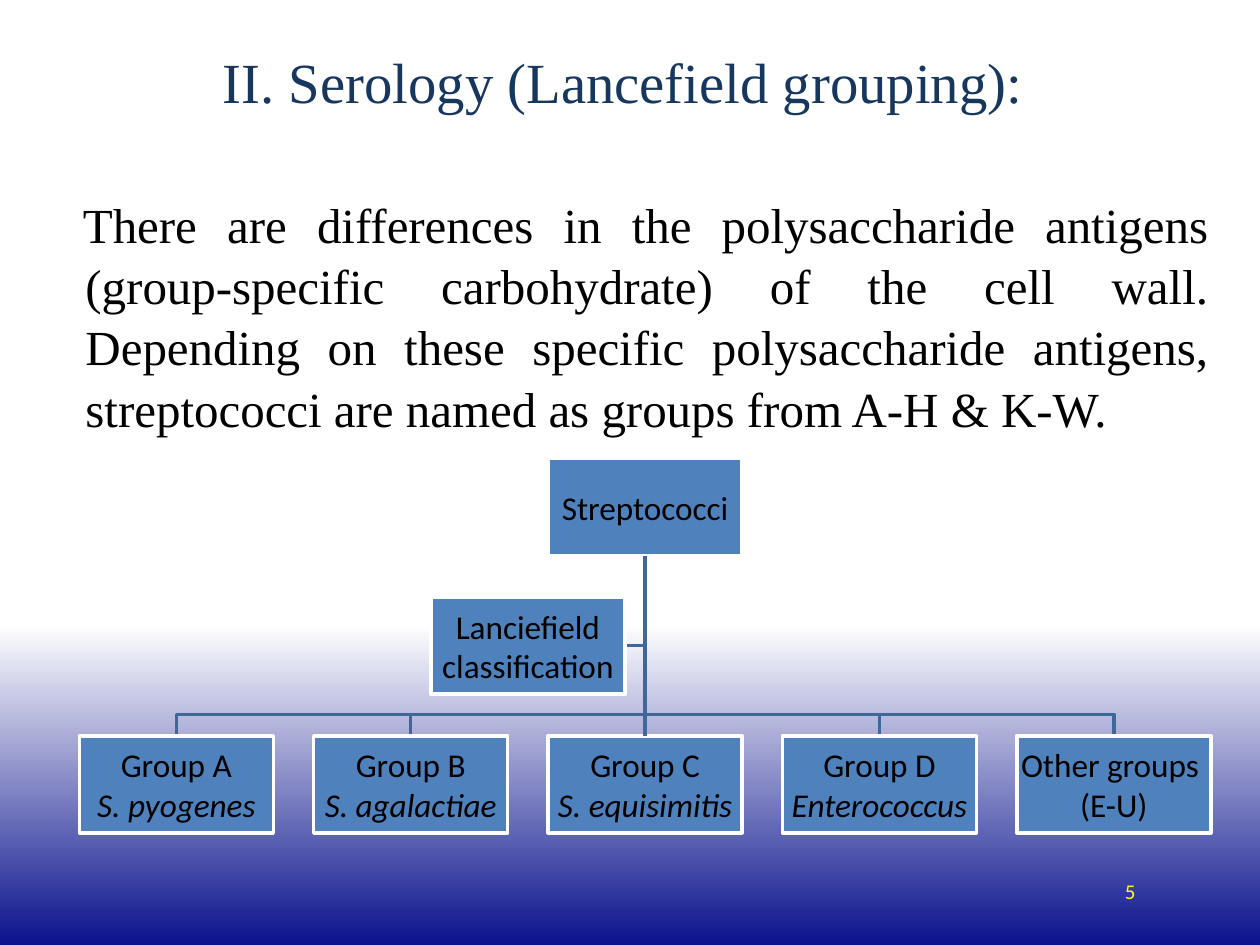
import pptx
import pptx.util
import pptx.dml.color
import pptx.enum.shapes
import pptx.enum.text
import lxml.etree
from typing import NamedTuple

RGBColor = pptx.dml.color.RGBColor
WHITE = RGBColor(0xFF, 0xFF, 0xFF)
BLACK = RGBColor(0, 0, 0)
NAVY = RGBColor(0x0A, 0x12, 0x8C)
TITLE_BLUE = RGBColor(0x17, 0x37, 0x5E)
BOX_BLUE = RGBColor(0x4F, 0x81, 0xBD)
LINE_BLUE = RGBColor(0x3F, 0x67, 0x97)
YELLOW = RGBColor(0xFF, 0xFF, 0)

SLIDE_WIDTH = pptx.util.Inches(10)
SLIDE_HEIGHT = pptx.util.Inches(7.5)
LINE_WIDTH = pptx.util.Pt(2)
GRID_LEFT, GRID_TOP = pptx.util.Inches(0.63), pptx.util.Inches(3.64)
COLUMN_STEP, ROW_STEP = pptx.util.Inches(1.86), pptx.util.Inches(1.1)
BOX_WIDTH, BOX_HEIGHT = pptx.util.Inches(1.54), pptx.util.Inches(0.77)
BUS_GAP = pptx.util.Inches(0.17)
PADDING = pptx.util.Inches(0.01)

ALIGN = pptx.enum.text.PP_ALIGN
MIDDLE = pptx.enum.text.MSO_ANCHOR.MIDDLE
TITLE_FONT = {"name": "Times New Roman", "size": pptx.util.Pt(32.4)}
BODY_FONT = {"name": "Times New Roman", "size": pptx.util.Pt(28)}
BOX_FONT = {"name": "Calibri", "size": pptx.util.Pt(19)}
NUMBER_FONT = {"name": "Calibri", "size": pptx.util.Pt(12)}
BOX_FRAME = {
    "margin_left": PADDING, "margin_right": PADDING,
    "margin_top": PADDING, "margin_bottom": PADDING,
    "vertical_anchor": MIDDLE, "word_wrap": True,
}


class Node(NamedTuple):
    column: float
    row: int
    label: str
    detail: str = ""
    italic: bool = True

    @property
    def left(self) -> int:
        return round(GRID_LEFT + self.column * COLUMN_STEP)

    @property
    def top(self) -> int:
        return GRID_TOP + self.row * ROW_STEP

    @property
    def center(self) -> int:
        return self.left + BOX_WIDTH // 2


ROOT = Node(2, 0, "Streptococci")
ASSISTANT = Node(1.5, 1, "Lanciefield classification")
GROUPS = [
    Node(0, 2, "Group A", "S. pyogenes"),
    Node(1, 2, "Group B", "S. agalactiae"),
    Node(2, 2, "Group C", "S. equisimitis"),
    Node(3, 2, "Group D", "Enterococcus"),
    Node(4, 2, "Other groups ", "(E-U)", False),
]


def apply(target, values: dict) -> None:
    for name, value in values.items():
        setattr(target, name, value)


def write(paragraph, text: str, font: dict, color: RGBColor, align, italic=False) -> None:
    paragraph.alignment = align
    run = paragraph.add_run()
    run.text = text
    apply(run.font, {**font, "italic": italic})
    run.font.color.rgb = color


def share(left: float, top: float, width: float, height: float) -> dict:
    return {
        "left": round(SLIDE_WIDTH * left), "top": round(SLIDE_HEIGHT * top),
        "width": round(SLIDE_WIDTH * width), "height": round(SLIDE_HEIGHT * height),
    }


def draw_branch(shapes, points: list) -> None:
    builder = shapes.build_freeform(*points[0], scale=1.0)
    builder.add_line_segments(points[1:], close=False)
    branch = builder.convert_to_shape()
    branch.shadow.inherit = False
    branch.fill.background()
    branch.line.color.rgb = LINE_BLUE
    branch.line.width = LINE_WIDTH


def draw_node(shapes, node: Node):
    box = shapes.add_shape(
        pptx.enum.shapes.MSO_SHAPE.RECTANGLE, node.left, node.top, BOX_WIDTH, BOX_HEIGHT)
    box.shadow.inherit = False
    box.fill.solid()
    box.fill.fore_color.rgb = BOX_BLUE
    box.line.color.rgb = WHITE
    box.line.width = LINE_WIDTH
    frame = box.text_frame
    apply(frame, BOX_FRAME)
    write(frame.paragraphs[0], node.label, BOX_FONT, BLACK, ALIGN.CENTER)
    if node.detail:
        write(frame.add_paragraph(), node.detail, BOX_FONT, BLACK, ALIGN.CENTER, node.italic)
    return box


def draw_trunk(shapes, upper, lower) -> None:
    trunk = shapes.add_connector(pptx.enum.shapes.MSO_CONNECTOR.STRAIGHT, 0, 0, 0, 0)
    trunk.begin_connect(upper, 2)
    trunk.end_connect(lower, 0)
    trunk.line.color.rgb = LINE_BLUE
    trunk.line.width = LINE_WIDTH
    properties = trunk._element.spPr
    lxml.etree.SubElement(properties, pptx.oxml.ns.qn("a:effectLst"))


def draw_hierarchy(shapes) -> None:
    start = (ROOT.center, ROOT.top + BOX_HEIGHT)
    side = ASSISTANT.top + BOX_HEIGHT // 2
    draw_branch(shapes, [start, (ROOT.center, side), (ASSISTANT.left + BOX_WIDTH, side)])
    for group in GROUPS:
        if group.column != ROOT.column:
            bus = group.top - BUS_GAP
            draw_branch(shapes, [start, (ROOT.center, bus), (group.center, bus),
                                 (group.center, group.top)])
    boxes = {node: draw_node(shapes, node) for node in [ROOT, *GROUPS, ASSISTANT]}
    draw_trunk(shapes, boxes[ROOT], boxes[GROUPS[2]])


def paint_background(slide) -> None:
    fill = slide.background.fill
    fill.gradient()
    fill.gradient_angle = 270
    for stop, position, color in zip(fill.gradient_stops, (0.66, 1), (WHITE, NAVY)):
        stop.position = position
        stop.color.rgb = color


def main() -> None:
    presentation = pptx.Presentation()
    apply(presentation, {"slide_width": SLIDE_WIDTH, "slide_height": SLIDE_HEIGHT})
    slide = presentation.slides.add_slide(presentation.slide_layouts[5])
    paint_background(slide)

    title = slide.shapes.title
    apply(title, share(0.047, 0.04, 0.906, 0.092))
    apply(title.text_frame, {"vertical_anchor": MIDDLE, "word_wrap": True})
    write(title.text_frame.paragraphs[0], "II. Serology (Lancefield grouping): ",
          TITLE_FONT, TITLE_BLUE, ALIGN.CENTER)

    number = slide.shapes.add_textbox(**share(0.883, 0.91, 0.067, 0.067))
    apply(number.text_frame, {"vertical_anchor": MIDDLE, "word_wrap": True})
    write(number.text_frame.paragraphs[0], "5", NUMBER_FONT, YELLOW, ALIGN.LEFT)

    draw_hierarchy(slide.shapes)

    explanation = slide.shapes.add_textbox(**share(0.039, 0.197, 0.93, 0.265))
    explanation.text_frame.word_wrap = True
    paragraph = explanation.text_frame.paragraphs[0]
    write(paragraph,
          "There are differences in the polysaccharide antigens (group-specific "
          "carbohydrate) of the cell wall. Depending on these specific polysaccharide "
          "antigens, streptococci are named as groups from A-H & K-W.",
          BODY_FONT, BLACK, ALIGN.JUSTIFY)
    paragraph.line_spacing = 1.04
    for name, inches in {"marL": 0.19, "indent": -0.02}.items():
        paragraph._p.get_or_add_pPr().set(name, str(pptx.util.Inches(inches)))

    presentation.save("out.pptx")


if __name__ == "__main__":
    main()
